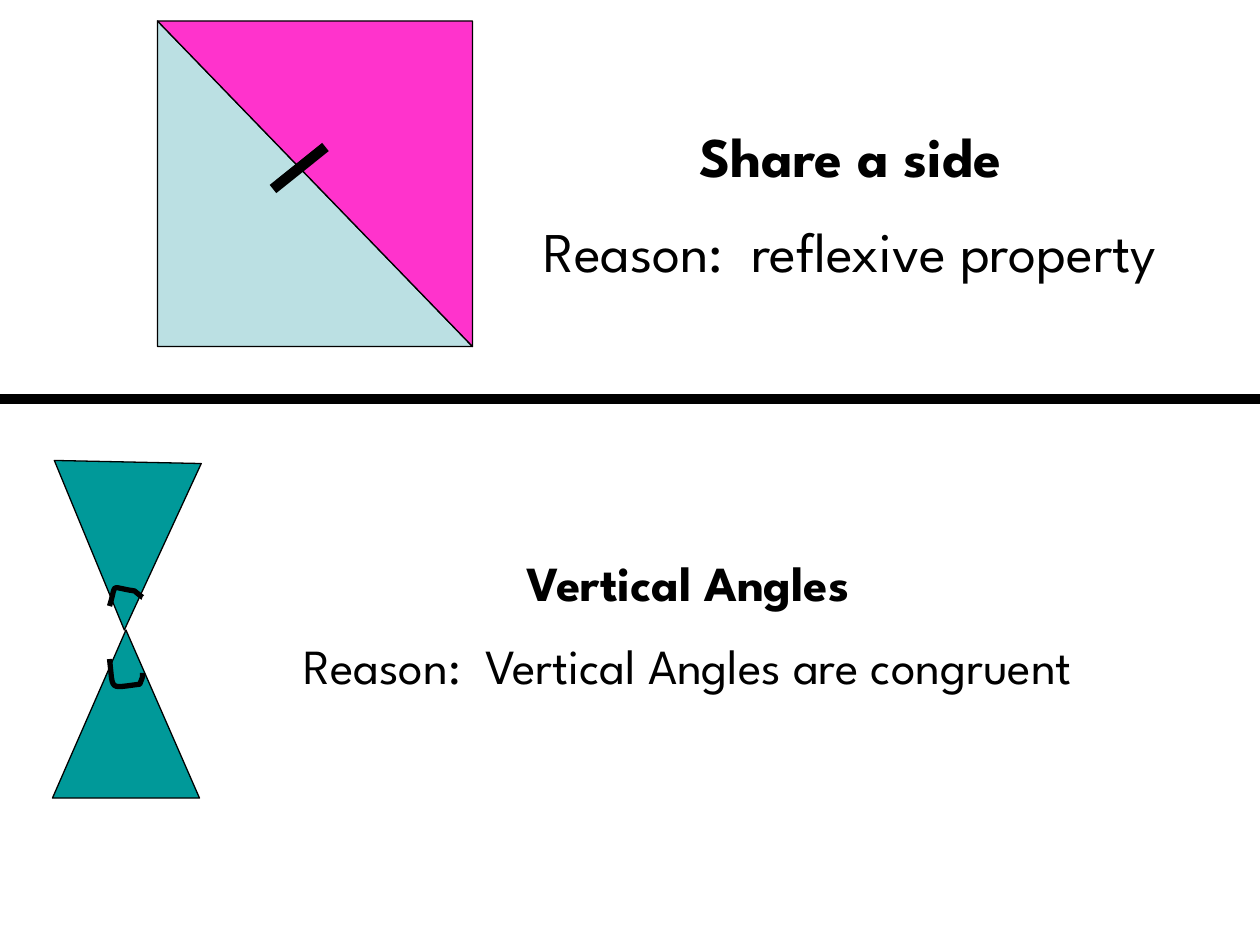
from dataclasses import dataclass

from lxml import etree
from pptx import Presentation
from pptx import util as u
from pptx.dml.color import RGBColor
from pptx.enum import shapes, text
from pptx.oxml.ns import qn


@dataclass(frozen=True)
class Theme:
    font: str = "League Spartan"
    ink: str = "000000"
    pale: str = "BBE0E3"
    pink: str = "FF33CC"
    teal: str = "009999"
    large: float = 32
    small: float = 28
    thin: float = 0.75
    arc: float = 3
    thick: float = 6
    gap: str = "50000"


@dataclass(frozen=True)
class Wedge:
    kind: shapes.MSO_SHAPE
    box: tuple
    fill: str
    turn: float = 0


@dataclass(frozen=True)
class Note:
    head: str
    body: str
    box: tuple
    size: float


T = Theme()
RIGHT = shapes.MSO_SHAPE.RIGHT_TRIANGLE
PEAK = shapes.MSO_SHAPE.ISOSCELES_TRIANGLE
HALF = (90, 12, 180, 186)

SQUARE = [
    Wedge(RIGHT, HALF, T.pale),
    Wedge(RIGHT, HALF, T.pink, 180),
]
GLASS = [
    Wedge(PEAK, (30, 360, 84, 96), T.teal),
    Wedge(PEAK, (30, 264, 84, 96), T.teal, 181.2),
]
ARCS = [
    [(62.6, 346.3), (67, 332.6), (61.9, 335.5), (77, 337.7),
     (78.5, 339.1), (81.4, 341.3), (81.4, 341.3)],
    [(62.6, 376.6), (64.8, 395.3), (61.9, 393.1), (79.9, 391),
     (82.1, 385.2), (81.4, 387.4), (81.4, 384.5)],
]
NOTES = [
    Note("Share a side", "Reason:  reflexive property",
         (282, 66, 408, 143.3), T.large),
    Note("Vertical Angles", "Reason:  Vertical Angles are congruent",
         (102, 312, 582, 92.2), T.small),
]


def rgb(code: str) -> RGBColor:
    return RGBColor.from_string(code)


def pen(line, width: float) -> None:
    line.color.rgb = rgb(T.ink)
    line.width = u.Pt(width)


def wedge(group, item: Wedge) -> None:
    shape = group.shapes.add_shape(item.kind, *map(u.Pt, item.box))
    shape.rotation = item.turn
    shape.shadow.inherit = False
    shape.fill.solid()
    shape.fill.fore_color.rgb = rgb(item.fill)
    pen(shape.line, T.thin)


def stroke(home, start: tuple, end: tuple) -> None:
    line = home.add_connector(
        shapes.MSO_CONNECTOR.STRAIGHT, *map(u.Pt, start + end))
    pen(line.line, T.thick)
    etree.SubElement(line._element.spPr, qn("a:effectLst"))


def curve(ctrl: list, steps: int = 12) -> list:
    dots = [ctrl[0]]
    for i in range(0, len(ctrl) - 1, 3):
        for n in range(1, steps + 1):
            t = n / steps
            mix = ((1 - t) ** 3, 3 * t * (1 - t) ** 2,
                   3 * t * t * (1 - t), t ** 3)
            dots.append(tuple(
                sum(m * p[k] for m, p in zip(mix, ctrl[i:i + 4]))
                for k in (0, 1)))
    return [(u.Pt(x), u.Pt(y)) for x, y in dots]


def arc(group, ctrl: list) -> None:
    dots = curve(ctrl)
    pencil = group.shapes.build_freeform(*dots[0])
    pencil.add_line_segments(dots[1:], close=False)
    shape = pencil.convert_to_shape()
    shape.shadow.inherit = False
    shape.fill.background()
    pen(shape.line, T.arc)


def write(para, words: str, *, size: float, bold: bool = False) -> None:
    para.alignment = text.PP_ALIGN.CENTER
    space = etree.SubElement(para._p.get_or_add_pPr(), qn("a:spcBef"))
    etree.SubElement(space, qn("a:spcPct"), val=T.gap)
    run = para.add_run()
    run.text = words
    run.font.name = T.font
    run.font.size = u.Pt(size)
    run.font.bold = bold
    run.font.color.rgb = rgb(T.ink)


def label(home, note: Note) -> None:
    frame = home.add_textbox(*map(u.Pt, note.box)).text_frame
    frame.word_wrap = True
    frame.auto_size = text.MSO_AUTO_SIZE.SHAPE_TO_FIT_TEXT
    write(frame.paragraphs[0], note.head, size=note.size, bold=True)
    write(frame.add_paragraph(), note.body, size=note.size)


def main() -> None:
    deck = Presentation()
    deck.slide_width, deck.slide_height = u.Pt(720), u.Pt(540)
    home = deck.slides.add_slide(deck.slide_layouts[6]).shapes

    square = home.add_group_shape()
    for item in SQUARE:
        wedge(square, item)
    stroke(square.shapes, (156, 108), (186, 84))
    label(home, NOTES[0])

    glass = home.add_group_shape()
    for item in GLASS:
        wedge(glass, item)
    for ctrl in ARCS:
        arc(glass, ctrl)
    label(home, NOTES[1])

    stroke(home, (0, 228), (720, 228))
    deck.save("out.pptx")


if __name__ == "__main__":
    main()
